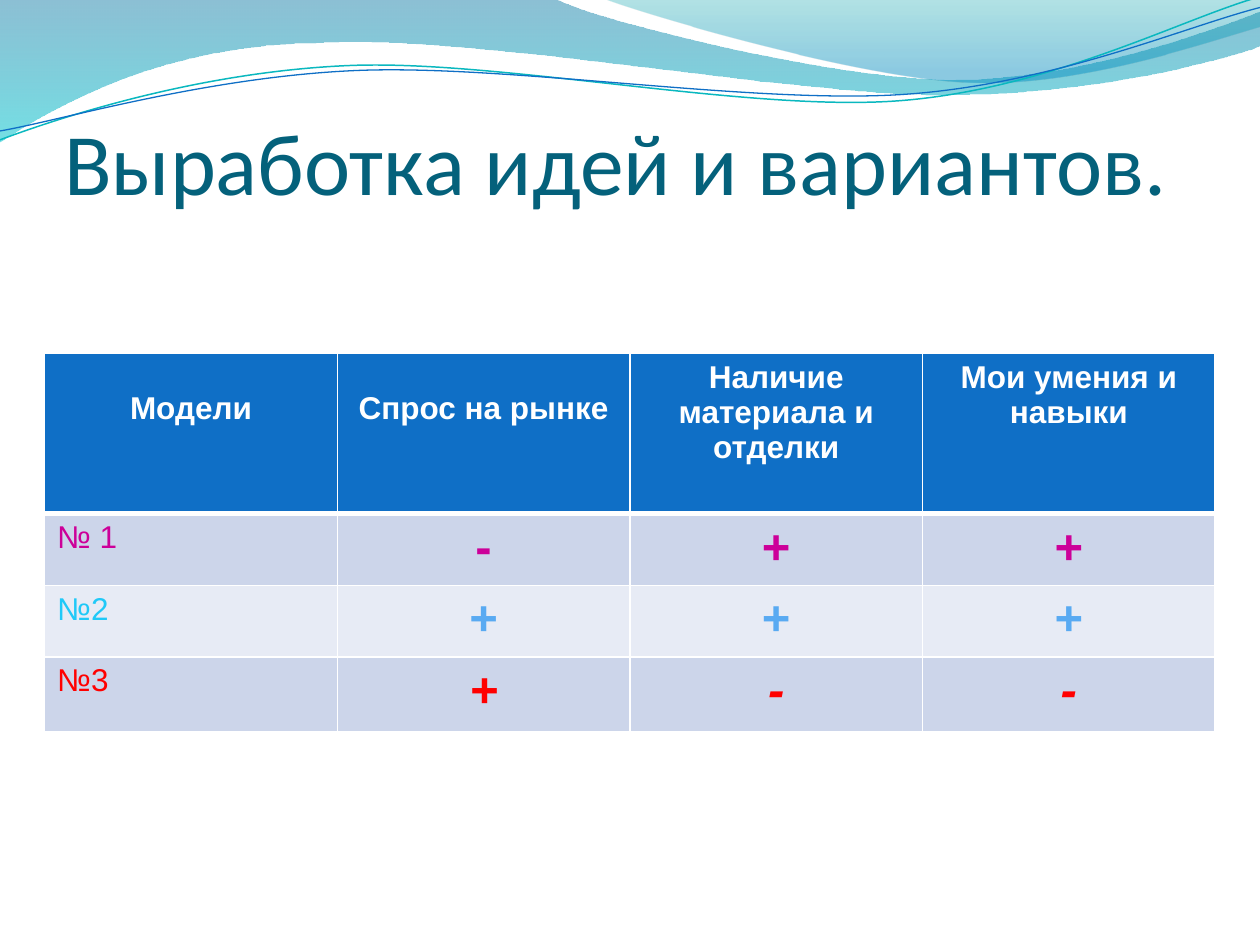
from math import cos, radians, sin

from lxml.etree import SubElement
from pptx import Presentation
from pptx.dml.color import RGBColor
from pptx.enum.text import MSO_ANCHOR, PP_ALIGN
from pptx.oxml.ns import qn
from pptx.util import Inches, Pt

WHITE = RGBColor(0xFF, 0xFF, 0xFF)
TITLE_TEAL = RGBColor(0x04, 0x61, 0x7B)
HEADER_BLUE = RGBColor(0x0F, 0x6F, 0xC6)
BAND_DARK = RGBColor(0xCC, 0xD5, 0xEA)
BAND_LIGHT = RGBColor(0xE7, 0xEB, 0xF5)
MAGENTA = RGBColor(0xCC, 0x00, 0x99)
CYAN = RGBColor(0x20, 0xC9, 0xF8)
SKY = RGBColor(0x59, 0xAA, 0xF2)
RED = RGBColor(0xFF, 0x00, 0x00)
LINE_TEAL = RGBColor(0x0A, 0xB8, 0xBF)
WAVE_BLUE = RGBColor(0x00, 0x74, 0xA1)
WAVE_CYAN = RGBColor(0x00, 0xC6, 0xCF)
CREST_TEAL = RGBColor(0x00, 0xA1, 0xA9)
CREST_BLUE = RGBColor(0x00, 0x8B, 0xBF)

STROKE_TILT = -2.7  # degrees

# Each outline is a list of points (x, y) and cubic curves (x1, y1, x2, y2, x, y), in inches.
WAVE = [
    (0, -0.01), (4.4, -0.01),
    (4.76, 0.17, 6.64, 0.63, 7.58, 0.63), (8.53, 0.63, 9.58, 0.26, 10, 0.09),
    (10.01, 0.36),
    (9.83, 0.44, 8.7, 0.76, 7.46, 0.75), (6.22, 0.75, 3.82, 0.28, 2.57, 0.34),
    (1.29, 0.35, 0.46, 0.83, -0.01, 1.13),
]
CREST = [
    (4.79, -0.01),
    (5.09, 0.11, 6.82, 0.62, 7.69, 0.65), (8.56, 0.69, 9.61, 0.32, 10, 0.21),
    (10, 0),
]
TEAL_STROKE = [
    (0, 1.11), (0.48, 0.93, 1.58, 0.57, 2.77, 0.52),
    (3.95, 0.47, 5.93, 0.89, 7.13, 0.8), (8.33, 0.71, 9.38, 0.15, 9.98, -0.02),
]
BLUE_STROKE = [
    (0, 1.04), (0.47, 0.96, 1.64, 0.61, 2.83, 0.56),
    (4.03, 0.51, 5.97, 0.83, 7.17, 0.75), (8.36, 0.67, 9.41, 0.21, 10, 0.06),
]

HEADERS = ["Модели", "Спрос на рынке", "Наличие материала и отделки", "Мои умения и навыки"]
# Label, marks, label colour, mark colour, band, italic marks
MODELS = [
    ("№ 1", "-++", MAGENTA, MAGENTA, BAND_DARK, False),
    ("№2", "+++", CYAN, SKY, BAND_LIGHT, False),
    ("№3", "+--", RED, RED, BAND_DARK, True),
]
ROW_HEIGHTS = [1.27, 0.57, 0.57, 0.59]


def pairs(segment):
    return list(zip(segment[::2], segment[1::2]))


def turn(outline, center, degrees):
    """Turn every point of an outline about a center."""
    c, s = cos(radians(degrees)), sin(radians(degrees))
    cx, cy = center
    return [
        [value for x, y in pairs(segment)
         for value in (cx + (x - cx) * c - (y - cy) * s, cy + (x - cx) * s + (y - cy) * c)]
        for segment in outline]


def add_outline(slide, outline, close):
    """Add a freeform, joining each curve's three points into one cubic segment."""
    points = [(Inches(x), Inches(y)) for segment in outline for x, y in pairs(segment)]
    builder = slide.shapes.build_freeform(*points[0])
    builder.add_line_segments(points[1:], close=close)
    shape = builder.convert_to_shape()
    shape.shadow.inherit = False
    steps = iter(list(shape._element.iter(qn("a:lnTo"))))
    for segment in outline[1:]:
        first = next(steps)
        if len(segment) == 6:
            first.tag = qn("a:cubicBezTo")
            for _ in range(2):
                merged = next(steps)
                first.append(merged[0])
                merged.getparent().remove(merged)
    return shape


def add_wave(slide, outline, stops):
    """Add a filled wave; stops are (position, colour, opacity in percent)."""
    wave = add_outline(slide, outline, True)
    wave.line.fill.background()
    wave.fill.gradient()
    wave.fill.gradient_angle = 270
    for stop, (position, color, _) in zip(wave.fill.gradient_stops, stops):
        stop.position = position
        stop.color.rgb = color
    for color_tag, (_, _, opacity) in zip(wave._element.iter(qn("a:srgbClr")), stops):
        SubElement(color_tag, qn("a:alpha")).set("val", str(opacity * 1000))


def add_stroke(slide, outline, center, color, width):
    stroke = add_outline(slide, turn(outline, center, -STROKE_TILT), False)
    stroke.rotation = STROKE_TILT
    stroke.fill.background()
    stroke.line.color.rgb = color
    stroke.line.width = Pt(width)


def set_title(slide, text):
    title = slide.shapes.title
    title.left, title.top, title.width, title.height = map(Inches, (0.51, 0.44, 9, 1.25))
    frame = title.text_frame
    frame.text = text
    frame.vertical_anchor = MSO_ANCHOR.BOTTOM
    frame.margin_left = frame.margin_right = frame.margin_bottom = 0
    frame.margin_top = Inches(0.05)
    paragraph = frame.paragraphs[0]
    paragraph.alignment = PP_ALIGN.LEFT
    font = paragraph.runs[0].font
    font.name, font.size, font.color.rgb = "Calibri", Pt(50), TITLE_TEAL
    slide.shapes._spTree.append(title._element)  # in front of the waves


def set_borders(cell, top, bottom):
    properties = cell._tc.get_or_add_tcPr()
    for index, (side, width) in enumerate(
            [("lnL", 1), ("lnR", 1), ("lnT", top), ("lnB", bottom)]):
        border = properties.makeelement(qn(f"a:{side}"), {"w": str(Pt(width))})
        fill = SubElement(border, qn("a:solidFill"))
        SubElement(fill, qn("a:srgbClr")).set("val", str(WHITE))
        properties.insert(index, border)


def fill_cell(cell, text, band, color, size=18, bold=True, italic=False,
              align=PP_ALIGN.CENTER):
    cell.text_frame.text = text
    cell.fill.solid()
    cell.fill.fore_color.rgb = band
    paragraph = cell.text_frame.paragraphs[0]
    paragraph.alignment = align
    font = paragraph.runs[0].font
    font.name, font.size, font.color.rgb = "Arial", Pt(size), color
    font.bold, font.italic = bold, italic


def add_model_table(slide):
    table = slide.shapes.add_table(
        len(MODELS) + 1, len(HEADERS), Pt(25.5), Pt(202),
        Inches(9.29), Inches(sum(ROW_HEIGHTS))).table
    for row, height in zip(table.rows, ROW_HEIGHTS):
        row.height = Inches(height)
    for column, header in enumerate(HEADERS):
        cell = table.cell(0, column)
        fill_cell(cell, header, HEADER_BLUE, WHITE)
        if column < 2:
            cell.margin_top = Inches(0.3)
        set_borders(cell, 1, 3)
    for row, (label, marks, label_color, mark_color, band, italic) in enumerate(MODELS, 1):
        fill_cell(table.cell(row, 0), label, band, label_color, bold=False,
                  align=PP_ALIGN.LEFT)
        for column, mark in enumerate(marks, 1):
            fill_cell(table.cell(row, column), mark, band, mark_color, 28, italic=italic)
        for column in range(len(HEADERS)):
            set_borders(table.cell(row, column), 3 if row == 1 else 1, 1)


def main():
    deck = Presentation()
    deck.slide_width, deck.slide_height = Inches(10), Inches(7.5)
    slide = deck.slides.add_slide(deck.slide_layouts[5])
    add_wave(slide, WAVE, [(0, WAVE_BLUE, 45), (1, WAVE_CYAN, 55)])
    add_wave(slide, CREST, [(0, CREST_TEAL, 30), (0.8, CREST_BLUE, 45)])
    add_stroke(slide, TEAL_STROKE, (4.99, 0.58), LINE_TEAL, 0.85)
    add_stroke(slide, BLUE_STROKE, (5, 0.59), HEADER_BLUE, 0.75)
    set_title(slide, "Выработка идей и вариантов.")
    add_model_table(slide)
    deck.save("out.pptx")


if __name__ == "__main__":
    main()
